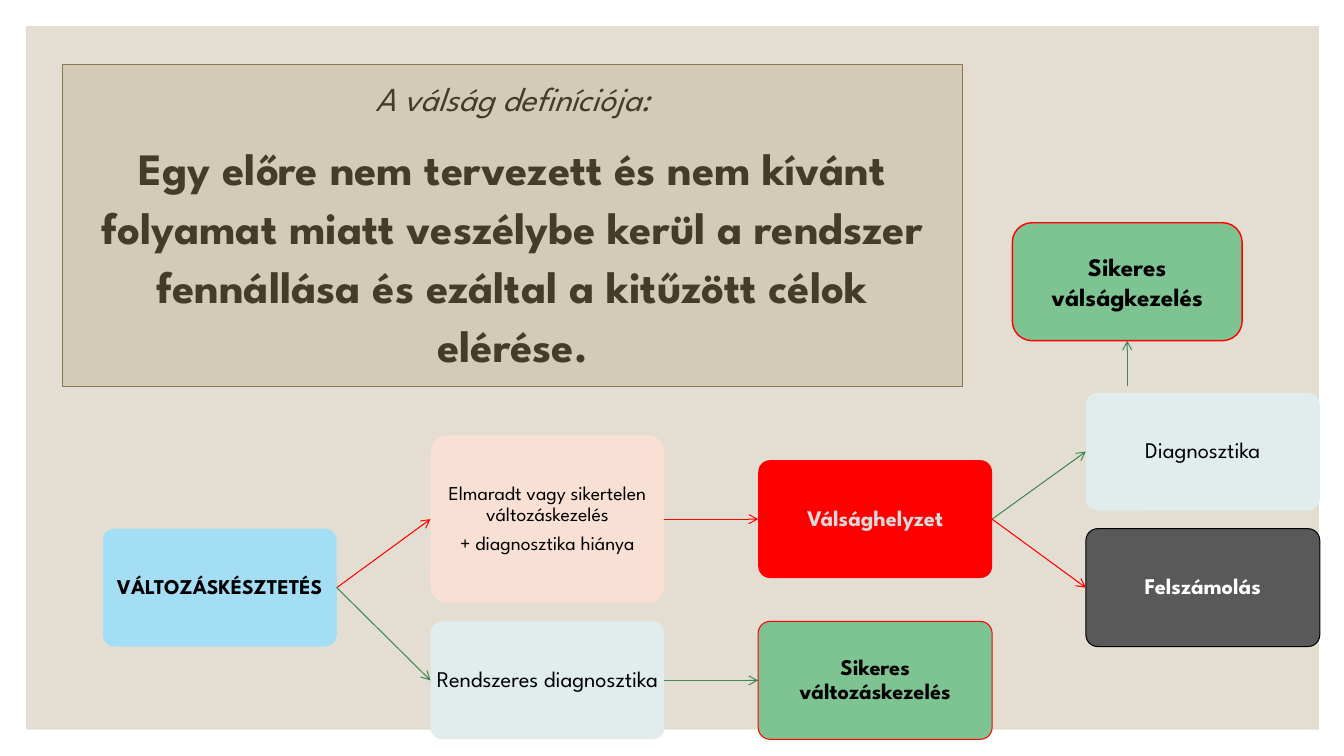
from lxml import etree
from pptx import Presentation
from pptx.dml.color import RGBColor
from pptx.enum.shapes import MSO_CONNECTOR, MSO_SHAPE
from pptx.enum.text import MSO_ANCHOR, MSO_AUTO_SIZE, PP_ALIGN
from pptx.oxml.ns import qn
from pptx.util import Inches, Pt

RECTANGLE = MSO_SHAPE.RECTANGLE
ROUNDED = MSO_SHAPE.ROUNDED_RECTANGLE
STRAIGHT = MSO_CONNECTOR.STRAIGHT
MIDDLE = MSO_ANCHOR.MIDDLE
NO_FIT = MSO_AUTO_SIZE.NONE
CENTER = PP_ALIGN.CENTER
TOP, LEFT, BOTTOM, RIGHT = range(4)

FONT = "League Spartan"
COLORS = {
    "panel": "E3DED1", "title fill": "D3CBB6", "title line": "887952",
    "title text": "443C29", "sky": "A4DEF4", "peach": "F8E0D4",
    "mist": "E0EDEC", "success": "7EC492", "crisis": "FF0000",
    "way out": "3E8853", "dark": "595959", "black": "000000",
    "white": "FFFFFF", "pale": "D9D9D9",
}

# Flow grid in inches: equal columns, rows given by their centre lines
FLOW_LEFT, COLUMN_STEP = 1.02, 3.25
NODE_WIDTH, NODE_HEIGHT = 2.32, 1.17
ROW_CENTERS = [4.48, 5.15, 5.83, 6.75]

# name: (column, row, height, fill, line, text colour, size, bold, text)
NODES = {
    "change": (0, 2, NODE_HEIGHT, "sky", None, "black", 15, True,
               "VÁLTOZÁSKÉSZTETÉS"),
    "failure": (1, 1, 1.66, "peach", None, "black", 14, False,
                "Elmaradt vagy sikertelen változáskezelés\n+ diagnosztika hiánya"),
    "regular checks": (1, 3, NODE_HEIGHT, "mist", None, "black", 16, False,
                       "Rendszeres diagnosztika"),
    "crisis": (2, 1, NODE_HEIGHT, "crisis", None, "pale", 16, True,
               "Válsághelyzet"),
    "managed change": (2, 3, NODE_HEIGHT, "success", "crisis", "black", 16, True,
                       "Sikeres változáskezelés"),
    "diagnostics": (3, 0, NODE_HEIGHT, "mist", None, "black", 16, False,
                    "Diagnosztika"),
    "liquidation": (3, 2, NODE_HEIGHT, "dark", "black", "white", 16, True,
                    "Felszámolás"),
}
ARROWS = [
    ("change", "failure", "crisis"),
    ("change", "regular checks", "way out"),
    ("failure", "crisis", "crisis"),
    ("regular checks", "managed change", "way out"),
    ("crisis", "diagnostics", "way out"),
    ("crisis", "liquidation", "crisis"),
]


def color(name):
    return RGBColor.from_string(COLORS[name])


def paint(shape, fill, line=None, width=0.75):
    shape.fill.solid()
    shape.fill.fore_color.rgb = color(fill)
    if line:
        shape.line.color.rgb = color(line)
        shape.line.width = Pt(width)
    else:
        shape.line.fill.background()


def style_text(para, size, text_color, bold=False, italic=False):
    para.alignment = CENTER
    for span in para.runs:
        span.font.name = FONT
        span.font.size = Pt(size)
        span.font.bold = bold
        span.font.italic = italic
        span.font.color.rgb = color(text_color)


def add_box(page, kind, box, fill, line=None, width=0.75):
    shape = page.shapes.add_shape(kind, *[Inches(length) for length in box])
    shape.shadow.inherit = False
    paint(shape, fill, line, width)
    return shape


def add_arrow(page, start, end, line):
    arrow = page.shapes.add_connector(
        STRAIGHT, *[Inches(length) for length in (*start, *end)])
    arrow.line.color.rgb = color(line)
    arrow.line.width = Pt(0.75)
    properties = arrow.line._get_or_add_ln()
    etree.SubElement(properties, qn("a:tailEnd"), type="arrow")
    etree.SubElement(arrow.element.spPr, qn("a:effectLst"))
    return arrow


def add_definition(page, box):
    title = page.shapes.title
    title.left, title.top, title.width, title.height = [
        Inches(length) for length in box]
    paint(title, "title fill", "title line")
    frame = title.text_frame
    frame.text = ("A válság definíciója:\n"
                  "Egy előre nem tervezett és nem kívánt folyamat miatt veszélybe "
                  "kerül a rendszer fennállása és ezáltal a kitűzött célok elérése.")
    frame.word_wrap = True
    frame.auto_size = NO_FIT
    frame.vertical_anchor = MIDDLE
    frame.margin_left = frame.margin_right = Inches(0.28)
    frame.margin_top, frame.margin_bottom = 0, Inches(0.05)
    heading, definition = frame.paragraphs
    style_text(heading, 24, "title text", italic=True)
    style_text(definition, 32, "title text", bold=True)
    for para in frame.paragraphs:
        para.line_spacing = 1.1
        para.space_before = Pt(12)


def add_node(page, column, row, height, fill, line, text_color, size, bold, text):
    left = FLOW_LEFT + column * COLUMN_STEP
    top = ROW_CENTERS[row] - height / 2
    node = add_box(page, ROUNDED, (left, top, NODE_WIDTH, height), fill, line)
    node.adjustments[0] = 0.1
    frame = node.text_frame
    frame.text = text
    frame.word_wrap = True
    frame.vertical_anchor = MIDDLE
    frame.margin_left = frame.margin_right = Inches(0.01)
    frame.margin_top = frame.margin_bottom = Inches(0.01)
    for para in frame.paragraphs:
        style_text(para, size, text_color, bold)
        para.line_spacing = 0.9
        para.space_after = Pt(5)
    return node


def add_flow(page):
    nodes = {name: add_node(page, *details) for name, details in NODES.items()}
    for source, target, line in ARROWS:
        arrow = add_arrow(page, (0, 0), (1, 1), line)
        arrow.begin_connect(nodes[source], RIGHT)
        arrow.end_connect(nodes[target], LEFT)


def add_crisis_solved(page, box):
    left, top, width, height = box
    solved = add_box(page, ROUNDED, box, "success", "crisis", 1)
    frame = solved.text_frame
    frame.text = "Sikeres válságkezelés"
    frame.word_wrap = True
    frame.vertical_anchor = MIDDLE
    style_text(frame.paragraphs[0], 18, "black", bold=True)
    # Arrow rising from the diagnostics node
    middle, bottom = left + width / 2, top + height
    arrow = add_arrow(page, (middle, bottom + 0.45), (middle, bottom), "way out")
    arrow.end_connect(solved, BOTTOM)


def main():
    deck = Presentation()
    deck.slide_width, deck.slide_height = Inches(13.33), Inches(7.5)
    page = deck.slides.add_slide(deck.slide_layouts[5])

    # Backdrop panel, placed behind the title
    panel = add_box(page, RECTANGLE, (0.26, 0.26, 12.82, 6.98), "panel")
    page.shapes.title.element.addprevious(panel.element)

    add_definition(page, (0.62, 0.64, 8.93, 3.19))
    add_flow(page)
    add_crisis_solved(page, (10.04, 2.21, 2.28, NODE_HEIGHT))
    deck.save("out.pptx")


if __name__ == "__main__":
    main()
